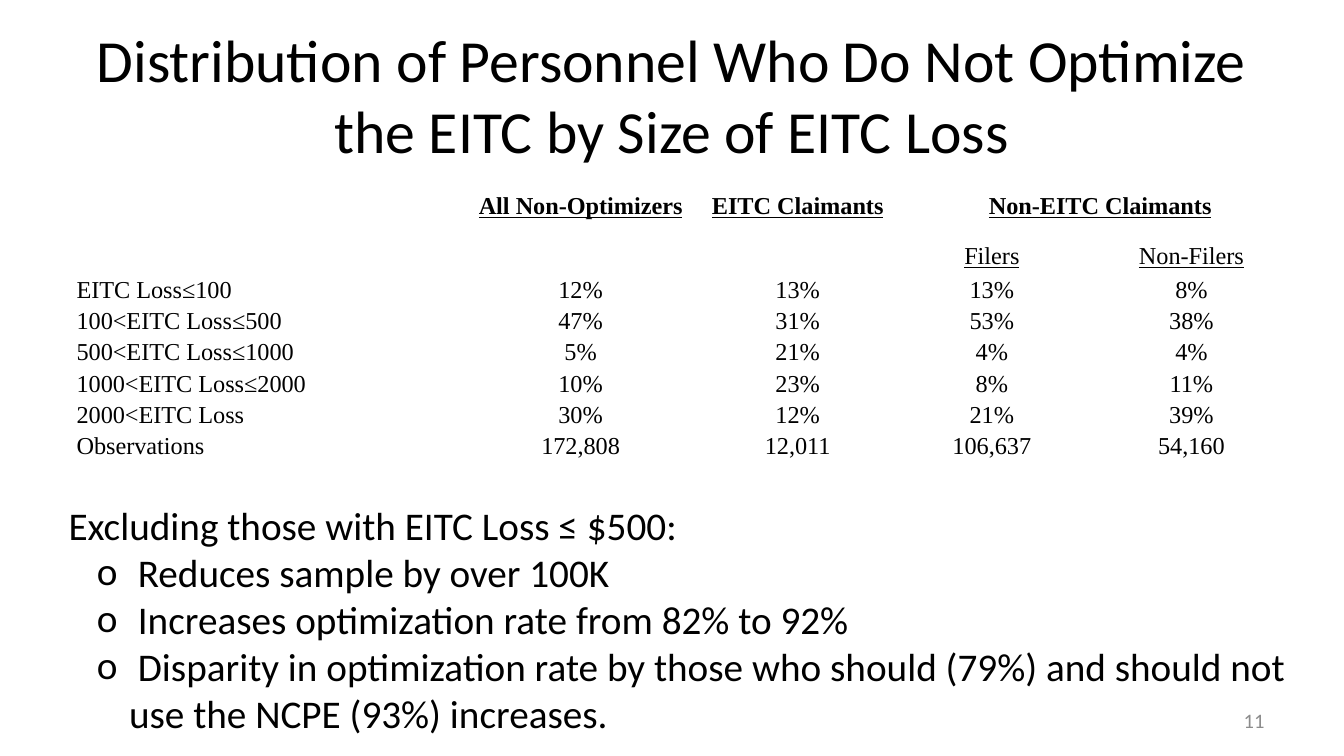
import pptx
import pptx.util
import pptx.dml.color
import pptx.enum.text
import lxml.etree
import pptx.oxml.ns

Inches = pptx.util.Inches
Align = pptx.enum.text.PP_ALIGN
Anchor = pptx.enum.text.MSO_ANCHOR
COLORS = {"ink": "000000", "number": "8C8C8C", "paper": "FFFFFF"}


def write(para, text, align, color="ink", **formats):
    para.alignment = align
    span = para.add_run()
    span.text = text
    span.font.color.rgb = pptx.dml.color.RGBColor.from_string(COLORS[color])
    for name, value in formats.items():
        setattr(span.font, name, value)


def set_frame(box, left, top, width, height, anchor):
    box.left, box.top = Inches(left), Inches(top)
    box.width, box.height = Inches(width), Inches(height)
    frame = box.text_frame
    formats = {"word_wrap": True, "vertical_anchor": anchor,
               "auto_size": pptx.enum.text.MSO_AUTO_SIZE.NONE,
               "margin_left": Inches(0.09), "margin_right": Inches(0.09),
               "margin_top": Inches(0.04), "margin_bottom": Inches(0.04)}
    for name, value in formats.items():
        setattr(frame, name, value)
    return frame


deck = pptx.Presentation()
deck.slide_width = Inches(10)
deck.slide_height = Inches(10 * 9 / 16)
page = deck.slides.add_slide(deck.slide_layouts[5])

frame = set_frame(page.shapes.title, 0.5, 0.23, 9, 0.94, Anchor.MIDDLE)
write(frame.paragraphs[0],
      "Distribution of Personnel Who Do Not Optimize the EITC by Size of EITC Loss",
      Align.CENTER, name="Calibri", size=pptx.util.Pt(32))

number_box = page.shapes.add_textbox(0, 0, 0, 0)
frame = set_frame(number_box, 7.17, 5.21, 2.33, 0.3, Anchor.MIDDLE)
write(frame.paragraphs[0], "11", Align.RIGHT, "number",
      name="Calibri", size=pptx.util.Pt(11))

rows = [
    ["", "All Non-Optimizers", "EITC Claimants", "Non-EITC Claimants", ""],
    ["", "", "", "Filers", "Non-Filers"],
    ["EITC Loss≤100", "12%", "13%", "13%", "8%"],
    ["100<EITC Loss≤500", "47%", "31%", "53%", "38%"],
    ["500<EITC Loss≤1000", "5%", "21%", "4%", "4%"],
    ["1000<EITC Loss≤2000", "10%", "23%", "8%", "11%"],
    ["2000<EITC Loss", "30%", "12%", "21%", "39%"],
    ["Observations", "172,808", "12,011", "106,637", "54,160"],
]
widths = [2.97, 1.7, 1.53, 1.36, 1.61]
heights = [0.45, 0.3] + [1.4 / 6] * 6
table = page.shapes.add_table(len(rows), len(widths), Inches(0.5), Inches(1.31),
                              Inches(sum(widths)), Inches(sum(heights))).table
table.horz_banding = False
for column, width in zip(table.columns, widths):
    column.width = Inches(width)
for row, height in zip(table.rows, heights):
    row.height = Inches(height)
table.cell(0, 3).merge(table.cell(0, 4))

for row_index, row in enumerate(rows):
    heading = row_index < 2
    for column_index, text in enumerate(row):
        cell = table.cell(row_index, column_index)
        cell.fill.solid()
        cell.fill.fore_color.rgb = pptx.dml.color.RGBColor.from_string(COLORS["paper"])
        cell.margin_left = cell.margin_right = Inches(0.07)
        cell.margin_top = cell.margin_bottom = 0
        cell.vertical_anchor = Anchor.MIDDLE if heading else Anchor.TOP
        para = cell.text_frame.paragraphs[0]
        para.font.size = pptx.util.Pt(13)
        if text:
            write(para, text, Align.CENTER if column_index else Align.LEFT,
                  name="Times New Roman", size=pptx.util.Pt(13),
                  bold=row_index == 0, underline=heading)

notes = [
    "Excluding those with EITC Loss ≤ $500:",
    " Reduces sample by over 100K",
    " Increases optimization rate from 82% to 92%",
    " Disparity in optimization rate by those who should (79%) and should not"
    " use the NCPE (93%) increases.",
]
findings_box = page.shapes.add_textbox(0, 0, 0, 0)
frame = set_frame(findings_box, 0.42, 3.69, 9.25, 1.86, Anchor.TOP)
for index, text in enumerate(notes):
    para = frame.add_paragraph() if index else frame.paragraphs[0]
    write(para, text, Align.LEFT, name="Calibri", size=pptx.util.Pt(21))
    if index:
        para.level = 1
        properties = para._p.get_or_add_pPr()
        properties.set("marL", str(Inches(0.45)))
        properties.set("indent", str(Inches(-0.24)))
        for tag, key, value in [("a:buFont", "typeface", "Calibri"),
                                ("a:buChar", "char", "o")]:
            bullet = lxml.etree.SubElement(properties, pptx.oxml.ns.qn(tag))
            bullet.set(key, value)

deck.save("out.pptx")
